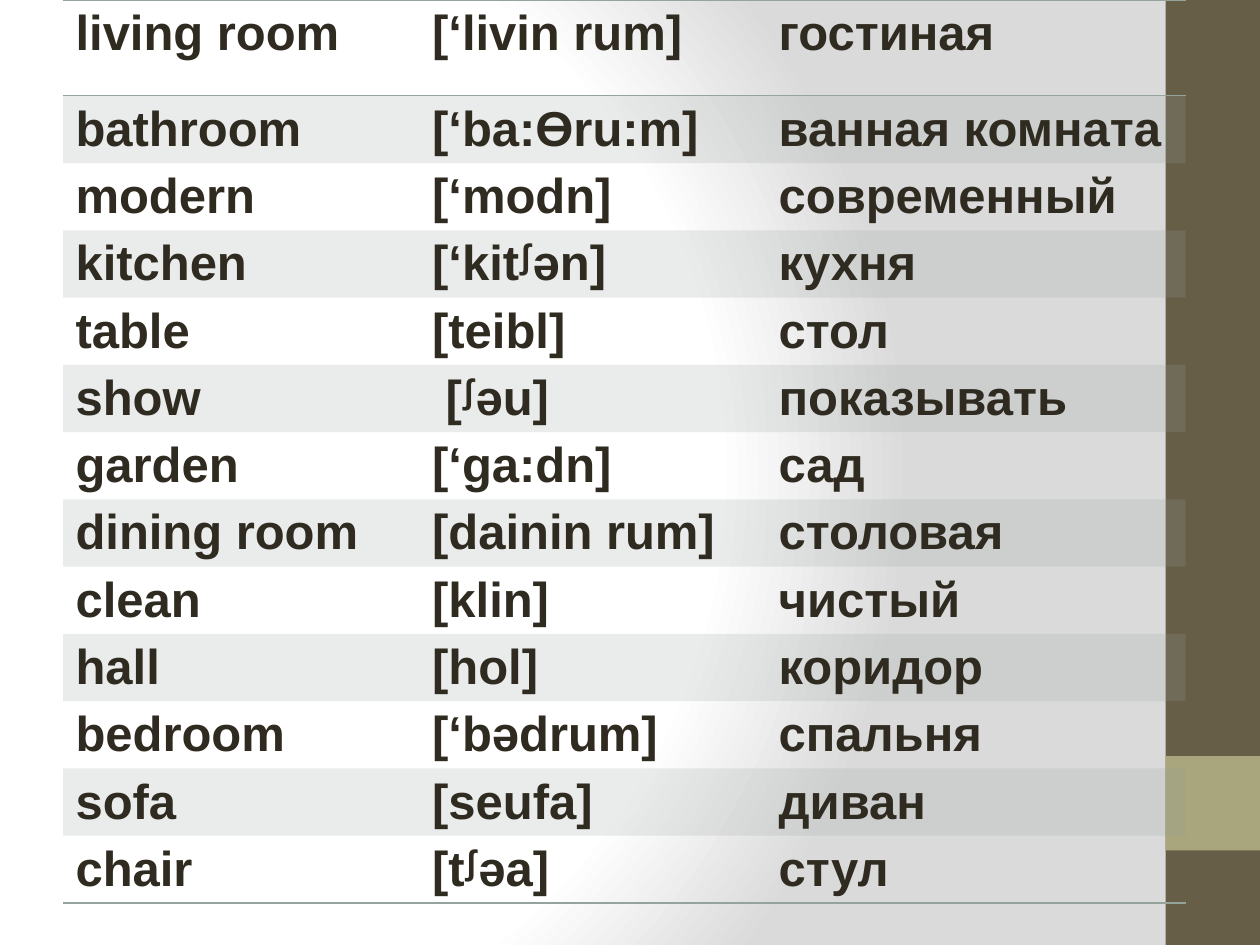
from typing import NamedTuple

from pptx import Presentation
from pptx.dml.color import RGBColor
from pptx.enum.shapes import MSO_SHAPE
from pptx.oxml import parse_xml
from pptx.oxml.ns import nsdecls
from pptx.util import Inches, Pt

RECTANGLE = MSO_SHAPE.RECTANGLE
BROWN = RGBColor(0x67, 0x5E, 0x47)
OLIVE = RGBColor(0xA9, 0xA5, 0x7C)
SAGE = RGBColor(0x95, 0xA3, 0x9D)
INK = RGBColor(0x2F, 0x2B, 0x20)
WHITE = RGBColor(0xFF, 0xFF, 0xFF)
GREY = RGBColor(0xDA, 0xDA, 0xDA)
BAND_ALPHA = 20
COLUMN_WIDTHS = (2.83, 2.75, 3.33)
FIRST_ROW_HEIGHT = 0.76
ROW_HEIGHT = 0.46


class SideBlock(NamedTuple):
    top: float
    height: float
    color: RGBColor


class Word(NamedTuple):
    english: str
    sound: str
    russian: str


SIDE_BLOCKS = (SideBlock(0, 7.5, BROWN), SideBlock(6, 0.75, OLIVE))

WORDS = (
    Word("living room", "[‘livin rum]", "гостиная"),
    Word("bathroom", "[‘ba:Өru:m]", "ванная комната"),
    Word("modern", "[‘modn]", "современный"),
    Word("kitchen", "[‘kitᶴәn]", "кухня"),
    Word("table", "[teibl]", "стол"),
    Word("show", " [ᶴәu]", "показывать"),
    Word("garden", "[‘ga:dn]", "сад"),
    Word("dining room", "[dainin rum]", "столовая"),
    Word("clean", "[klin]", "чистый"),
    Word("hall", "[hol]", "коридор"),
    Word("bedroom", "[‘bәdrum]", "спальня"),
    Word("sofa", "[seufa]", "диван"),
    Word("chair", "[tᶴәa]", "стул"),
)


def set_background(page) -> None:
    """Fill the page with a circular gradient from white to grey."""
    fill = page.background.fill
    fill.solid()
    stops = "".join(
        f'<a:gs pos="{position * 1000}"><a:srgbClr val="{color}"/></a:gs>'
        for position, color in ((0, WHITE), (75, WHITE), (100, GREY))
    )
    gradient = parse_xml(
        f'<a:gradFill {nsdecls("a")} rotWithShape="1"><a:gsLst>{stops}</a:gsLst>'
        '<a:path path="circle">'
        '<a:fillToRect l="20000" t="50000" r="100000" b="50000"/>'
        "</a:path></a:gradFill>"
    )
    properties = page.background._cSld.bg.bgPr
    properties.replace(properties[0], gradient)


def add_side_block(page, block: SideBlock) -> None:
    shape = page.shapes.add_shape(
        RECTANGLE, Inches(9.25), Inches(block.top), Inches(0.75), Inches(block.height)
    )
    shape.shadow.inherit = False
    shape.fill.solid()
    shape.fill.fore_color.rgb = block.color
    shape.line.fill.background()


def write_text(
    frame, text: str, *, size: float, color: RGBColor, bold: bool, font: str = "Arial"
) -> None:
    span = frame.paragraphs[0].add_run()
    span.text = text
    span.font.name = font
    span.font.size = Pt(size)
    span.font.bold = bold
    span.font.color.rgb = color


def style_cell(cell, *, banded: bool, ruled: str) -> None:
    """Set the translucent band and the rules on the sides named in ruled."""
    properties = cell._tc.get_or_add_tcPr()
    for side in "LRTB":
        if side in ruled:
            paint = f'<a:solidFill><a:srgbClr val="{SAGE}"/></a:solidFill>'
        else:
            paint = "<a:noFill/>"
        properties.append(
            parse_xml(f'<a:ln{side} {nsdecls("a")} w="{Pt(1)}">{paint}</a:ln{side}>')
        )
    if banded:
        cell.fill.solid()
        cell.fill.fore_color.rgb = SAGE
        color = properties.find("./{*}solidFill/{*}srgbClr")
        color.append(
            parse_xml(f'<a:alpha {nsdecls("a")} val="{BAND_ALPHA * 1000}"/>')
        )
    else:
        cell.fill.background()


def add_word_table(page, words: tuple[Word, ...]) -> None:
    heights = [FIRST_ROW_HEIGHT] + [ROW_HEIGHT] * (len(words) - 1)
    table = page.shapes.add_table(
        len(words),
        len(COLUMN_WIDTHS),
        Inches(0.5),
        Inches(0),
        Inches(sum(COLUMN_WIDTHS)),
        Inches(sum(heights)),
    ).table
    table.first_row = False
    table.horz_banding = False
    for column, width in zip(table.columns, COLUMN_WIDTHS):
        column.width = Inches(width)
    rules = {0: "TB", 1: "T", len(words) - 1: "B"}
    for index, (word, height) in enumerate(zip(words, heights)):
        table.rows[index].height = Inches(height)
        for cell, text in zip(table.rows[index].cells, word):
            style_cell(cell, banded=index % 2 == 1, ruled=rules.get(index, ""))
            write_text(cell.text_frame, text, size=28, color=INK, bold=True)


def main() -> None:
    deck = Presentation()
    deck.slide_width = Inches(10)
    deck.slide_height = Inches(7.5)
    page = deck.slides.add_slide(deck.slide_layouts[6])
    set_background(page)
    for block in SIDE_BLOCKS:
        add_side_block(page, block)
    add_word_table(page, WORDS)
    deck.save("out.pptx")


if __name__ == "__main__":
    main()
